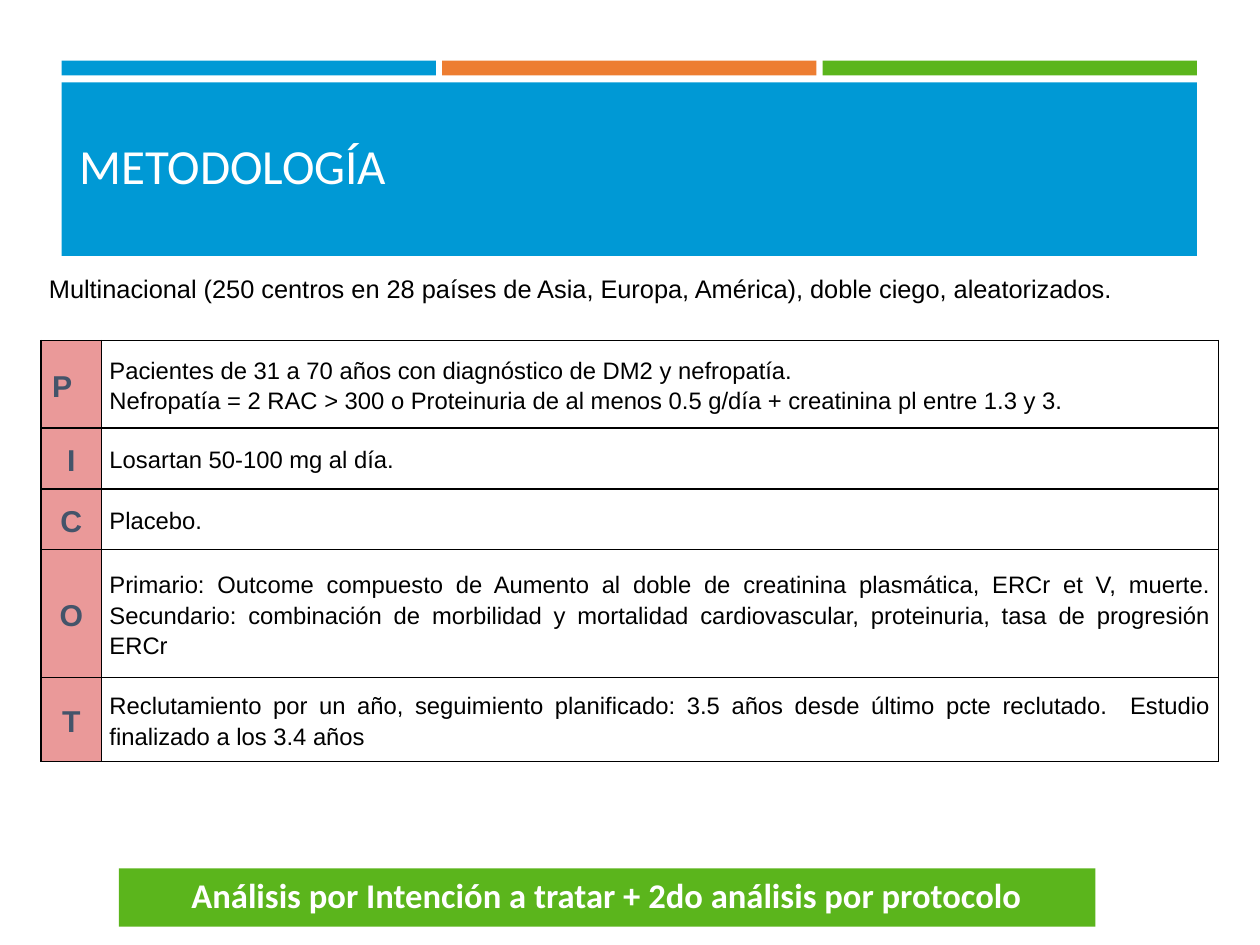
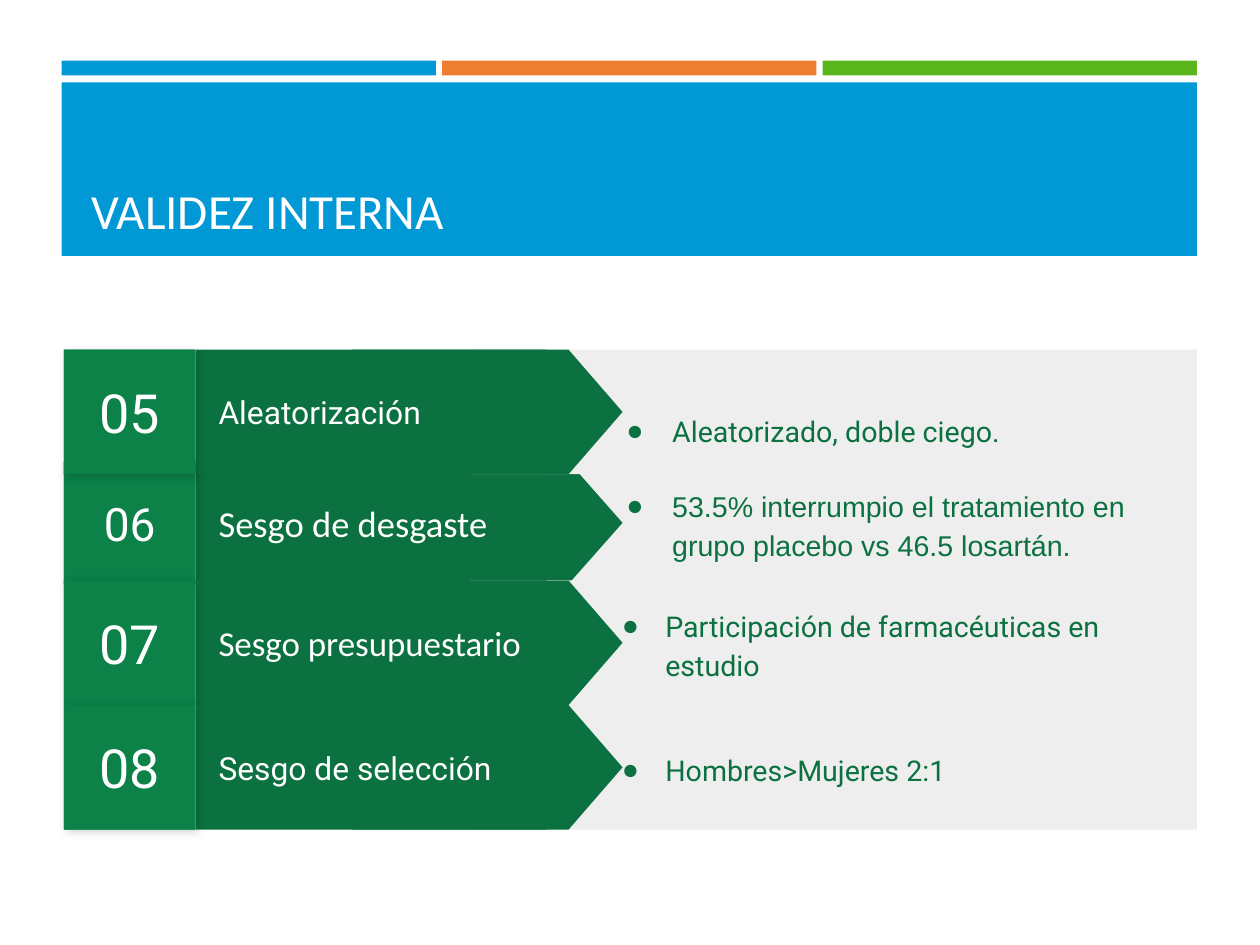
from dataclasses import dataclass

from pptx import Presentation
from pptx.dml.color import RGBColor
from pptx.enum.shapes import MSO_SHAPE as Shape
from pptx.enum.text import MSO_ANCHOR as Anchor, PP_ALIGN as Align
from pptx.oxml import parse_xml
from pptx.oxml.ns import nsdecls
from pptx.util import Cm, Emu, Inches, Pt


@dataclass(frozen=True)
class Theme:
    blue: str = "0099D5"
    orange: str = "ED7D31"
    lime: str = "5BB51C"
    white: str = "FFFFFF"
    black: str = "000000"
    pink: str = "EA9999"
    slate: str = "44546A"
    panel: str = "EEEEEE"
    forest: str = "0B7140"
    shade: str = "0B7743"
    emerald: str = "0C8148"
    heading_font: str = "Calibri"
    table_font: str = "Arial"
    row_font: str = "Roboto"
    title_size: float = 30.9
    banner_size: float = 21.8
    intro_size: float = 16
    letter_size: float = 19
    cell_size: float = 15
    number_size: float = 34
    label_size: float = 20
    detail_size: float = 18


THEME = Theme()
WIDTH, HEIGHT = Cm(28), Cm(21)


@dataclass(frozen=True)
class Box:
    """Position and size in percent of the slide's width and height."""
    left: float
    top: float
    width: float
    height: float

    def emu(self) -> tuple[Emu, Emu, Emu, Emu]:
        return (across(self.left), down(self.top),
                across(self.width), down(self.height))


@dataclass(frozen=True)
class PicotRow:
    letter: str
    text: str
    height: float
    align: Align = Align.JUSTIFY
    before: float = 12
    letter_inset: float = 0.07


@dataclass(frozen=True)
class BiasRow:
    number: str
    label: str
    detail: str
    top: float
    height: float = 13.18
    number_size: float = THEME.number_size
    label_size: float = THEME.label_size
    label_font: str = THEME.row_font
    detail_font: str = THEME.row_font
    detail_shift: float = 0
    margin: float = 0.5
    hanging: float = 0.38


BAND = Box(4.9, 8.71, 90.1, 18.38)
STRIPE_TOP, STRIPE_HEIGHT, STRIPE_GAP = 6.41, 1.57, 0.5
TABLE_LEFT, TABLE_TOP, INTRO_HEIGHT = 3.25, 24.79, 11.25
TABLE_COLUMNS = (4.81, 88.65)
INTRO = ("Multinacional (250 centros en 28 países de Asia, Europa, América), "
         "doble ciego, aleatorizados.")
PICOT = (
    PicotRow("P", "Pacientes de 31 a 70 años con diagnóstico de DM2 y nefropatía.\n"
             "Nefropatía = 2 RAC > 300 o Proteinuria de al menos 0.5 g/día + "
             "creatinina pl entre 1.3 y 3.", 9.25, Align.LEFT, 0, 0.23),
    PicotRow("I", "Losartan 50-100 mg al día.", 6.45),
    PicotRow("C", "Placebo.", 6.45),
    PicotRow("O", "Primario: Outcome compuesto de Aumento al doble de creatinina "
             "plasmática, ERCr et V, muerte. Secundario: combinación de morbilidad "
             "y mortalidad cardiovascular, proteinuria, tasa de progresión ERCr", 13.54),
    PicotRow("T", "Reclutamiento por un año, seguimiento planificado: 3.5 años desde "
             "último pcte reclutado.  Estudio finalizado a los 3.4 años", 8.87),
)
# Later rows overlap earlier ones, so the order is the stacking order.
BIASES = (
    BiasRow("06", "Sesgo de desgaste",
            "53.5% interrumpio el tratamiento en grupo placebo vs 46.5 losartán.",
            48.85, height=12.94, number_size=29, label_size=23,
            label_font=THEME.heading_font, detail_font=THEME.table_font,
            margin=0.56, hanging=0.4),
    BiasRow("07", "Sesgo presupuestario", "Participación de farmacéuticas en estudio",
            61.43, label_size=22, label_font=THEME.heading_font),
    BiasRow("05", "Aleatorización", "Aleatorizado, doble ciego.", 37,
            detail_shift=1.75, margin=0.56, hanging=0.4),
    BiasRow("08", "Sesgo de selección", "Hombres>Mujeres 2:1", 74.61),
)


def across(percent: float) -> Emu:
    return Emu(round(WIDTH * percent / 100))


def down(percent: float) -> Emu:
    return Emu(round(HEIGHT * percent / 100))


def write(frame, text: str, *, size: float, color: str, font: str,
          bold: bool = False, align: Align = Align.LEFT, spacing: float = 1,
          before: float = 0, after: float = 0) -> None:
    """Fill a text frame, one paragraph per line of text."""
    for index, line in enumerate(text.split("\n")):
        paragraph = frame.add_paragraph() if index else frame.paragraphs[0]
        paragraph.alignment = align
        paragraph.line_spacing = spacing
        paragraph.space_before, paragraph.space_after = Pt(before), Pt(after)
        run = paragraph.add_run()
        run.text = line
        run.font.size, run.font.bold, run.font.name = Pt(size), bold, font
        run.font.color.rgb = RGBColor.from_string(color)


def set_frame(frame, anchor: Anchor, side: float, edge: float) -> None:
    frame.word_wrap = True
    frame.vertical_anchor = anchor
    frame.margin_left = frame.margin_right = Inches(side)
    frame.margin_top = frame.margin_bottom = Inches(edge)


def add_block(slide, box: Box, fill: str, kind: Shape = Shape.RECTANGLE):
    block = slide.shapes.add_shape(kind, *box.emu())
    block.shadow.inherit = False
    block.fill.solid()
    block.fill.fore_color.rgb = RGBColor.from_string(fill)
    block.line.fill.background()
    return block


def add_label(slide, box: Box, text: str, *, anchor: Anchor = Anchor.MIDDLE,
              side: float = 0.11, edge: float = 0.11, **text_format):
    frame = slide.shapes.add_textbox(*box.emu()).text_frame
    set_frame(frame, anchor, side, edge)
    write(frame, text, **text_format)
    return frame


def add_titled_slide(deck, title: str, left: float, top: float):
    slide = deck.slides.add_slide(deck.slide_layouts[6])
    colors = (THEME.blue, THEME.orange, THEME.lime)
    width = (BAND.width - STRIPE_GAP * (len(colors) - 1)) / len(colors)
    for index, color in enumerate(colors):
        stripe_left = BAND.left + index * (width + STRIPE_GAP)
        add_block(slide, Box(stripe_left, STRIPE_TOP, width, STRIPE_HEIGHT), color)
    add_block(slide, BAND, THEME.blue)
    add_label(slide, Box(left, top, 87.39, 15.84), title, anchor=Anchor.BOTTOM,
              side=0.1, edge=0.05, size=THEME.title_size, color=THEME.white,
              font=THEME.heading_font)
    return slide


def set_borders(cell, color: str | None, sides: str = "LRTB") -> None:
    """Outline the given sides; no color means no line."""
    paint = (f'<a:solidFill><a:srgbClr val="{color}"/></a:solidFill>'
             if color else "<a:noFill/>")
    properties = cell._tc.get_or_add_tcPr()
    for index, side in enumerate(sides):
        properties.insert(index, parse_xml(
            f'<a:ln{side} {nsdecls("a")} w="{Pt(1)}">{paint}</a:ln{side}>'))


def fill_cell(cell, text: str, fill: str | None = None, **text_format) -> None:
    cell.vertical_anchor = Anchor.MIDDLE
    cell.margin_left = cell.margin_right = Inches(0.07)
    cell.margin_top = cell.margin_bottom = Inches(0.08)
    if fill:
        cell.fill.solid()
        cell.fill.fore_color.rgb = RGBColor.from_string(fill)
    else:
        cell.fill.background()
    write(cell.text_frame, text, font=THEME.table_font, spacing=1.15, **text_format)


def add_picot_table(slide) -> None:
    heights = (INTRO_HEIGHT, *(row.height for row in PICOT))
    area = Box(TABLE_LEFT, TABLE_TOP, sum(TABLE_COLUMNS), sum(heights))
    table = slide.shapes.add_table(len(heights), len(TABLE_COLUMNS), *area.emu()).table
    table.first_row = table.horz_banding = False
    for column, width in zip(table.columns, TABLE_COLUMNS):
        column.width = across(width)
    for table_row, height in zip(table.rows, heights):
        table_row.height = down(height)

    intro, intro_end = table.cell(0, 0), table.cell(0, 1)
    intro.merge(intro_end)
    fill_cell(intro, INTRO, size=THEME.intro_size, color=THEME.black)
    intro_end.fill.background()
    for cell in (intro, intro_end):
        set_borders(cell, THEME.black, "B")
        set_borders(cell, None, "LRT")

    for index, row in enumerate(PICOT, start=1):
        letter, description = table.cell(index, 0), table.cell(index, 1)
        fill_cell(letter, row.letter, THEME.pink, size=THEME.letter_size,
                  color=THEME.slate, bold=True, align=Align.CENTER, before=12)
        letter.margin_right = Inches(row.letter_inset)
        fill_cell(description, row.text, size=THEME.cell_size, color=THEME.black,
                  align=row.align, before=row.before)
        for cell in (letter, description):
            set_borders(cell, THEME.black)


def cast_shadow(block) -> None:
    properties = block._element.spPr
    properties.remove(properties.find(
        "{http://schemas.openxmlformats.org/drawingml/2006/main}effectLst"))
    properties.append(parse_xml(
        f'<a:effectLst {nsdecls("a")}><a:outerShdw blurRad="{Pt(5.6)}" '
        f'dist="{Pt(2.2)}" dir="2700000" algn="bl" rotWithShape="0">'
        f'<a:srgbClr val="{THEME.black}"><a:alpha val="17000"/></a:srgbClr>'
        '</a:outerShdw></a:effectLst>'))


def add_bullet(paragraph, margin: float, hanging: float) -> None:
    properties = paragraph._p.get_or_add_pPr()
    properties.set("marL", str(Inches(margin)))
    properties.set("indent", str(-Inches(hanging)))
    for tag, content in (
            ("buClr", f'><a:srgbClr val="{THEME.forest}"/></a:buClr>'),
            ("buFont", f' typeface="{THEME.table_font}"/>'),
            ("buChar", ' char="●"/>')):
        properties.append(parse_xml(f'<a:{tag} {nsdecls("a")}{content}'))


def add_arrow(slide, box: Box) -> None:
    """Draw a pentagon that points right and covers the box after its turn."""
    left, top, width, height = box.emu()
    arrow = add_block(slide, box, THEME.forest, Shape.FLOWCHART_OFFPAGE_CONNECTOR)
    arrow.left, arrow.top = left + (width - height) // 2, top + (height - width) // 2
    arrow.width, arrow.height = height, width
    arrow.rotation = 270


def add_bias_row(slide, row: BiasRow) -> None:
    def span(left: float, width: float, shift: float = 0) -> Box:
        return Box(left, row.top + shift, width, row.height)

    add_block(slide, span(37.3, 57.7), THEME.panel)
    add_block(slide, span(15.52, 27.86), THEME.forest)
    add_arrow(slide, span(27.99, 21.42))
    add_label(slide, span(16.35, 30.85), row.label, size=row.label_size,
              color=THEME.white, font=row.label_font, before=3.6, after=6.6)
    number_box = span(5.08, 10.44)
    cast_shadow(add_block(slide, number_box, THEME.shade))
    number = add_block(slide, number_box, THEME.emerald).text_frame
    set_frame(number, Anchor.MIDDLE, 0.11, 0.11)
    write(number, row.number, size=row.number_size, color=THEME.white,
          font=THEME.row_font, align=Align.CENTER)
    detail = add_label(slide, span(47.28, 44.83, row.detail_shift), row.detail,
                       size=THEME.detail_size, color=THEME.forest,
                       font=row.detail_font, spacing=1.15)
    add_bullet(detail.paragraphs[0], row.margin, row.hanging)


def main() -> None:
    deck = Presentation()
    deck.slide_width, deck.slide_height = WIDTH, HEIGHT

    methodology = add_titled_slide(deck, "METODOLOGÍA", 5.44, 5.32)
    analysis = add_block(methodology, Box(9.44, 91.9, 77.5, 6.17), THEME.lime).text_frame
    set_frame(analysis, Anchor.TOP, 0.1, 0.05)
    write(analysis, "Análisis por Intención a tratar + 2do análisis por protocolo",
          size=THEME.banner_size, color=THEME.white, font=THEME.heading_font,
          bold=True, align=Align.CENTER)
    add_picot_table(methodology)

    validity = add_titled_slide(deck, "VALIDEZ INTERNA", 6.35, 10.04)
    for row in BIASES:
        add_bias_row(validity, row)
    deck.save("out.pptx")


if __name__ == "__main__":
    main()
